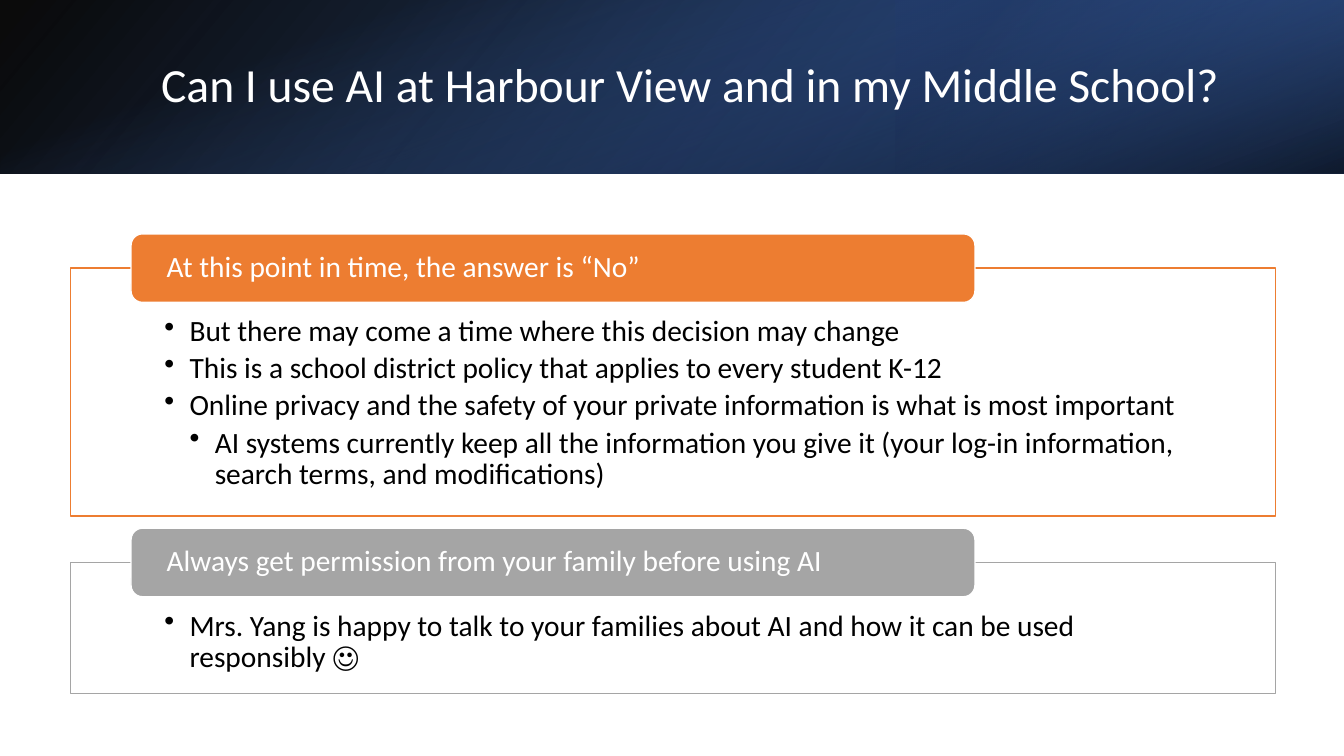
from lxml import etree
from pptx import Presentation
from pptx.dml.color import RGBColor
from pptx.enum.shapes import MSO_SHAPE
from pptx.enum.text import MSO_ANCHOR, PP_ALIGN
from pptx.oxml import parse_xml
from pptx.oxml.ns import nsdecls, qn
from pptx.util import Inches, Pt

RECT, ROUND = MSO_SHAPE.RECTANGLE, MSO_SHAPE.ROUNDED_RECTANGLE
TOP, MIDDLE = MSO_ANCHOR.TOP, MSO_ANCHOR.MIDDLE
LEFT = PP_ALIGN.LEFT
FONT = "Calibri"
COLORS = {
    "white": "FFFFFF", "black": "000000", "orange": "ED7D31",
    "gray": "A5A5A5", "blue": "4472C4", "deep": "2F5597", "navy": "203864",
}
WIDE, HIGH = 13.33, 7.5
BAND = 1.72
TAB = 0.68

SECTIONS = [
    ("orange", 2.66, 2.46, "At this point in time, the answer is “No”", [
        (1, "But there may come a time where this decision may change"),
        (1, "This is a school district policy that applies to every student K-12"),
        (1, "Online privacy and the safety of your private information is what is most important"),
        (2, "AI systems currently keep all the information you give it "
            "(your log-in information, search terms, and modifications)"),
    ]),
    ("gray", 5.58, 1.3, "Always get permission from your family before using AI", [
        (1, "Mrs. Yang is happy to talk to your families about AI "
            "and how it can be used responsibly ☺"),
    ]),
]


def rgb(name):
    return RGBColor.from_string(COLORS[name])


def add_box(slide, kind, box, fill, line):
    shape = slide.shapes.add_shape(kind, *map(Inches, box))
    shape.shadow.inherit = False
    shape.fill.solid()
    shape.fill.fore_color.rgb = rgb(fill)
    shape.line.color.rgb = rgb(line)
    shape.line.width = Pt(1)
    return shape


def add_shade(slide, box, stops, angle, turn=0, flip=False):
    """Add a borderless gradient; stops are (position, color, opacity) in percent."""
    shape = slide.shapes.add_shape(RECT, *map(Inches, box))
    shape.shadow.inherit = False
    shape.line.fill.background()
    shape.rotation = turn
    props = shape.element.spPr
    if flip:
        props.find(qn("a:xfrm")).set("flipH", "1")
    marks = "".join(
        f'<a:gs pos="{pos * 1000}"><a:srgbClr val="{COLORS[name]}">'
        f'<a:alpha val="{alpha * 1000}"/></a:srgbClr></a:gs>'
        for pos, name, alpha in stops)
    grad = parse_xml(
        f'<a:gradFill {nsdecls("a")} rotWithShape="1"><a:gsLst>{marks}</a:gsLst>'
        f'<a:lin ang="{angle * 60000}" scaled="0"/></a:gradFill>')
    props.find(qn("a:prstGeom")).addnext(grad)


def set_frame(frame, anchor, side, top=0, bottom=0):
    frame.word_wrap = True
    frame.vertical_anchor = anchor
    frame.margin_left = frame.margin_right = Inches(side)
    frame.margin_top, frame.margin_bottom = Inches(top), Inches(bottom)


def set_text(para, text, size, color):
    para.text = text
    para.alignment = LEFT
    para.line_spacing = 0.9
    para.font.name = FONT
    para.font.size = Pt(size)
    para.font.color.rgb = rgb(color)


def add_bullet(para, level):
    para.level = level
    para.space_after = Pt(3.8)
    props = para._p.get_or_add_pPr()
    props.set("marL", str(Inches(0.25 * level)))
    props.set("indent", str(Inches(-0.25)))
    mark = etree.Element(qn("a:buChar"), char="•")
    props.find(qn("a:defRPr")).addprevious(mark)


def add_banner(slide):
    add_shade(slide, (0, 0, WIDE, BAND),
              [(0, "black", 96), (100, "deep", 100)], 140, flip=True)
    add_shade(slide, (WIDE * 2 / 3, 0, WIDE / 3, BAND),
              [(19, "navy", 68), (100, "blue", 79)], 320, turn=180, flip=True)
    shift = (WIDE - BAND) / 2
    add_shade(slide, (shift, -shift, BAND, WIDE),
              [(23, "blue", 0), (99, "black", 74)], 340, turn=90)


def add_title(slide, text):
    box = slide.shapes.add_textbox(*map(Inches, (1.5, 0.38, 10.98, 0.96)))
    set_frame(box.text_frame, MIDDLE, 0.1, 0.05, 0.05)
    set_text(box.text_frame.paragraphs[0], text, 34, "white")


def add_section(slide, color, top, height, head, items):
    """Add an outlined panel of bullets with a heading tab on its top edge."""
    panel = add_box(slide, RECT, (0.7, top, 11.95, height), "white", color)
    frame = panel.text_frame
    set_frame(frame, TOP, 0.93, 0.48, 0.16)
    for i, (level, text) in enumerate(items):
        para = frame.add_paragraph() if i else frame.paragraphs[0]
        set_text(para, text, 21, "black")
        add_bullet(para, level)
    tab = add_box(slide, ROUND, (1.3, top - TAB / 2, 8.37, TAB), color, "white")
    set_frame(tab.text_frame, MIDDLE, 0.32)
    set_text(tab.text_frame.paragraphs[0], head, 21, "white")


def main():
    deck = Presentation()
    deck.slide_width, deck.slide_height = Inches(WIDE), Inches(HIGH)
    slide = deck.slides.add_slide(deck.slide_layouts[6])
    add_banner(slide)
    add_title(slide, "Can I use AI at Harbour View and in my Middle School?")
    for section in SECTIONS:
        add_section(slide, *section)
    deck.save("out.pptx")


if __name__ == "__main__":
    main()
